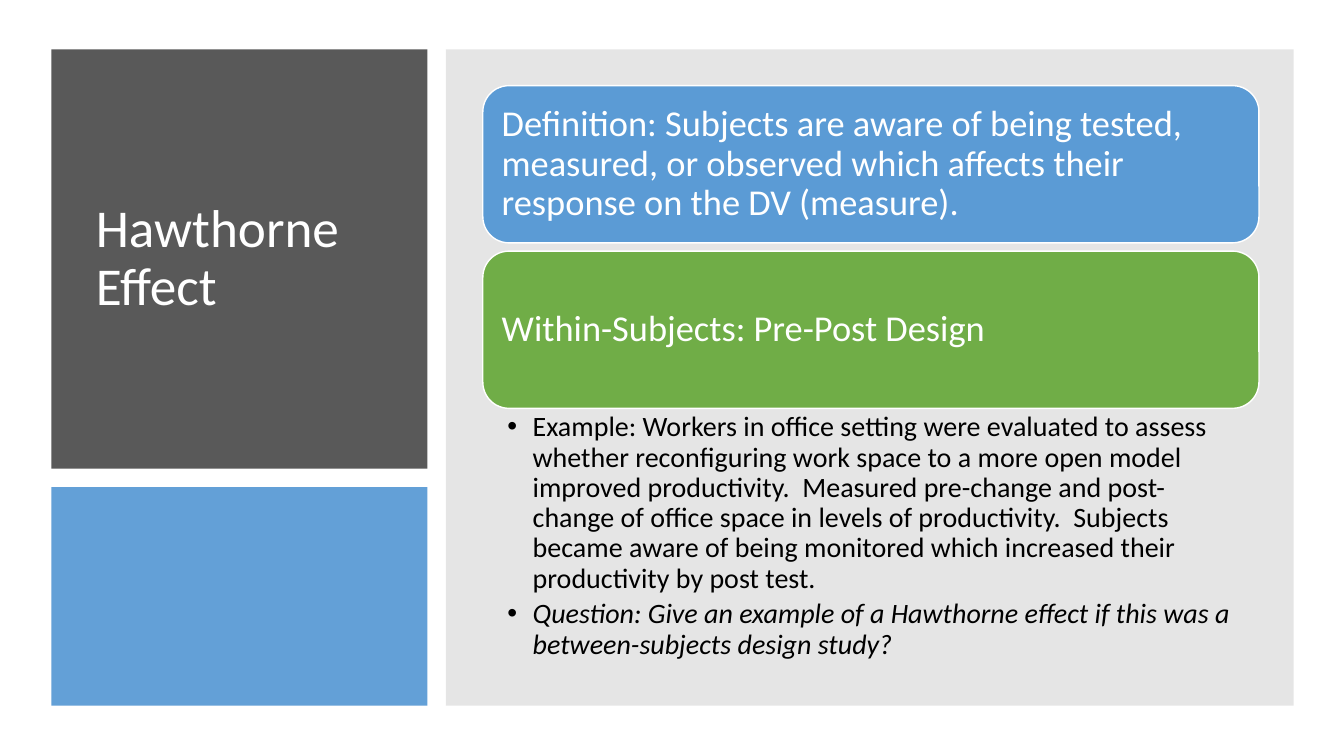
"""Build the Hawthorne Effect slide."""
import pptx
import pptx.util
import pptx.dml.color
import pptx.enum.shapes
import pptx.enum.text
import pptx.oxml
import pptx.oxml.ns

Pt = pptx.util.Pt
SHAPE = pptx.enum.shapes.MSO_SHAPE
ALIGN = pptx.enum.text.PP_ALIGN
ANCHOR = pptx.enum.text.MSO_ANCHOR

TITLE = "Hawthorne Effect"
CARDS = [
    ("Definition: Subjects are aware of being tested, measured, or observed "
     "which affects their response on the DV (measure).", "blue"),
    ("Within-Subjects: Pre-Post Design", "green"),
]
BULLETS = [
    ("Example: Workers in office setting were evaluated to assess whether "
     "reconfiguring work space to a more open model improved productivity.  "
     "Measured pre-change and post-change of office space in levels of "
     "productivity.  Subjects became aware of being monitored which increased "
     "their productivity by post test.", False),
    ("Question: Give an example of a Hawthorne effect if this was a "
     "between-subjects design study?", True),
]
THEME = {
    "font": "Calibri",
    "colors": {"dark": "595959", "blue": "5B9BD5", "green": "70AD47",
               "gray": "808080", "white": "FFFFFF", "black": "000000"},
    "sizes": {"title": 38, "card": 26, "body": 20},
}

LEFT, TOP, GAP = 36.7, 35.3, 13.2
SIDE_W, MAIN_W, FULL_H, TITLE_H = 268.6, 605.5, 468.7, 299.5
MAIN_X = LEFT + SIDE_W + GAP
LOWER_Y = TOP + TITLE_H + GAP
PANELS = [
    ((LEFT, TOP, SIDE_W, TITLE_H), "dark", 100),
    ((LEFT, LOWER_Y, SIDE_W, TOP + FULL_H - LOWER_Y), "blue", 95),
    ((MAIN_X, TOP, MAIN_W, FULL_H), "gray", 20),
]
CARD_X, CARD_Y, CARD_W, CARD_H, CARD_STEP = 344.9, 61.2, 554.4, 112.3, 118.2
TITLE_BOX = (61.2, 57.6, 224, 255)
BODY_BOX = (CARD_X, CARD_Y + CARD_STEP + CARD_H + 0.5, CARD_W, 186.5)


def color(name):
    return pptx.dml.color.RGBColor.from_string(THEME["colors"][name])


def add_box(s, kind, box, fill, alpha=100, line=None):
    sp = s.shapes.add_shape(kind, *map(Pt, box))
    sp.shadow.inherit = False
    sp.fill.solid()
    sp.fill.fore_color.rgb = color(fill)
    if alpha < 100:
        clr = sp.fill._xPr.find(".//" + pptx.oxml.ns.qn("a:srgbClr"))
        clr.append(pptx.oxml.parse_xml(
            f'<a:alpha {pptx.oxml.ns.nsdecls("a")} val="{alpha * 1000}"/>'))
    if line:
        sp.line.color.rgb = color(line)
        sp.line.width = Pt(1)
    else:
        sp.line.fill.background()
    return sp


def set_frame(tf, anchor, insets):
    tf.word_wrap = True
    tf.auto_size = pptx.enum.text.MSO_AUTO_SIZE.NONE
    tf.vertical_anchor = anchor
    tf.margin_left, tf.margin_top, tf.margin_right, tf.margin_bottom = map(Pt, insets)


def write(p, text, size="body", fill="white", italic=False, after=0, bullet=False):
    p.alignment = ALIGN.LEFT
    p.line_spacing = 0.9
    p.space_before, p.space_after = Pt(0), Pt(after)
    r = p.add_run()
    r.text = text
    r.font.name = THEME["font"]
    r.font.size = Pt(THEME["sizes"][size])
    r.font.color.rgb = color(fill)
    r.font.italic = italic
    if bullet:
        pPr = p._p.get_or_add_pPr()
        pPr.set("marL", str(Pt(18)))
        pPr.set("indent", str(-Pt(18)))
        pPr.append(pptx.oxml.parse_xml(
            f'<a:buChar {pptx.oxml.ns.nsdecls("a")} char="•"/>'))


def place(s, sp, box):
    sp.left, sp.top, sp.width, sp.height = map(Pt, box)
    s.shapes._spTree.append(sp._element)


def main():
    prs = pptx.Presentation()
    prs.slide_width, prs.slide_height = Pt(960), Pt(540)
    s = prs.slides.add_slide(prs.slide_layouts[1])
    title, body = s.shapes.title, s.placeholders[1]

    for box, fill, alpha in PANELS:
        add_box(s, SHAPE.RECTANGLE, box, fill, alpha)

    place(s, title, TITLE_BOX)
    set_frame(title.text_frame, ANCHOR.MIDDLE, (7.2, 3.6, 7.2, 3.6))
    write(title.text_frame.paragraphs[0], TITLE, size="title")

    for i, (text, fill) in enumerate(CARDS):
        box = (CARD_X, CARD_Y + i * CARD_STEP, CARD_W, CARD_H)
        card = add_box(s, SHAPE.ROUNDED_RECTANGLE, box, fill, line="white")
        set_frame(card.text_frame, ANCHOR.MIDDLE, (8, 8, 8, 8))
        write(card.text_frame.paragraphs[0], text, size="card")

    place(s, body, BODY_BOX)
    tf = body.text_frame
    set_frame(tf, ANCHOR.TOP, (17.6, 2.6, 14.4, 2.6))
    for i, (text, italic) in enumerate(BULLETS):
        p = tf.add_paragraph() if i else tf.paragraphs[0]
        write(p, text, fill="black", italic=italic, after=4, bullet=True)

    prs.save("out.pptx")


if __name__ == "__main__":
    main()
